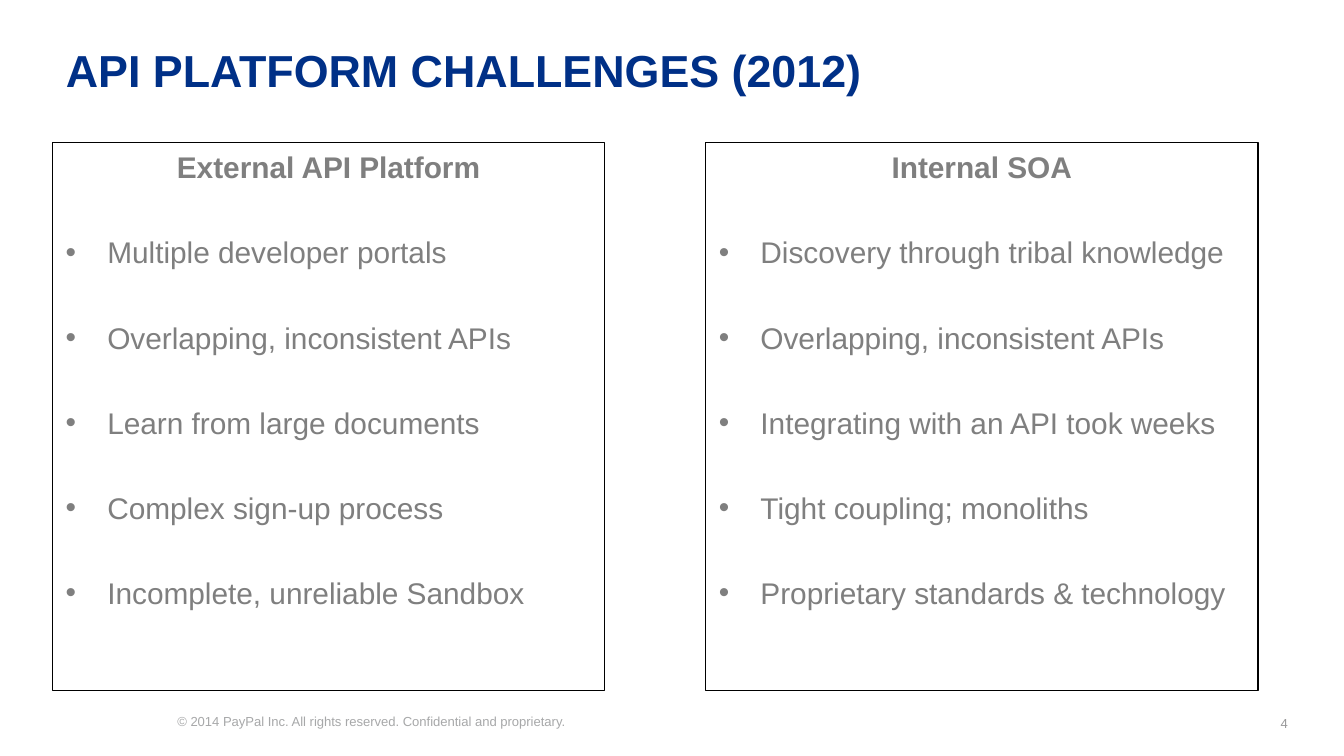
"""Build the API platform challenges slide."""
from dataclasses import dataclass

import pptx
import pptx.dml.color
import pptx.enum.shapes
import pptx.enum.text
import pptx.oxml
import pptx.oxml.ns
import pptx.util
from pptx.util import Inches

RGBColor = pptx.dml.color.RGBColor
Align = pptx.enum.text.PP_ALIGN
Anchor = pptx.enum.text.MSO_ANCHOR

NAVY = RGBColor(0x00, 0x30, 0x87)
GRAY = RGBColor(0x7F, 0x7F, 0x7F)
COPYRIGHT_GRAY = RGBColor(0xA7, 0xA8, 0xA9)
NUMBER_GRAY = RGBColor(0x99, 0x99, 0x9A)
BLACK = RGBColor(0x00, 0x00, 0x00)

FONT = "Arial"
BODY_SIZE = 16
PANEL_TOP = 1.06
PANEL_WIDTH = 4.11
PANEL_HEIGHT = 4.08
BULLET_INDENT = 0.31
NAMESPACE = pptx.oxml.ns.nsdecls("a")


@dataclass(frozen=True)
class Panel:
    left: float
    heading: str
    challenges: tuple[str, ...]


@dataclass(frozen=True)
class Note:
    text: str
    left: float
    top: float
    width: float
    height: float
    color: RGBColor
    align: Align
    anchor: Anchor
    inset: float


PANELS = (
    Panel(0.39, "External API Platform", (
        "Multiple developer portals",
        "Overlapping, inconsistent APIs",
        "Learn from large documents",
        "Complex sign-up process",
        "Incomplete, unreliable Sandbox",
    )),
    Panel(5.25, "Internal SOA", (
        "Discovery through tribal knowledge",
        "Overlapping, inconsistent APIs",
        "Integrating with an API took weeks",
        "Tight coupling; monoliths",
        "Proprietary standards & technology",
    )),
)

NOTES = (
    Note("© 2014 PayPal Inc. All rights reserved. Confidential and proprietary.",
         1.32, 5.31, 3.96, 0.18, COPYRIGHT_GRAY, Align.LEFT, Anchor.TOP, 0),
    Note("4", 9.22, 5.23, 0.46, 0.3, NUMBER_GRAY, Align.RIGHT, Anchor.MIDDLE, 0.1),
)


def format_text(paragraph, size: float, color: RGBColor, bold: bool = False) -> None:
    for run in paragraph.runs:
        run.font.name = FONT
        run.font.size = pptx.util.Pt(size)
        run.font.bold = bold
        run.font.color.rgb = color


def set_base_size(frame, size: int) -> None:
    list_style = frame._txBody.find(pptx.oxml.ns.qn("a:lstStyle"))
    list_style.append(pptx.oxml.parse_xml(
        f'<a:lvl1pPr {NAMESPACE}><a:defRPr sz="{size * 100}">'
        f'<a:latin typeface="{FONT}"/></a:defRPr></a:lvl1pPr>'))


def add_bullet(paragraph) -> None:
    properties = paragraph._p.get_or_add_pPr()
    properties.set("marL", str(Inches(BULLET_INDENT)))
    properties.set("indent", str(-Inches(BULLET_INDENT)))
    for element in (f'<a:buFont {NAMESPACE} typeface="{FONT}"/>',
                    f'<a:buChar {NAMESPACE} char="•"/>'):
        properties.append(pptx.oxml.parse_xml(element))


def add_title(slide, text: str) -> None:
    title = slide.shapes.title
    title.left, title.top = Inches(0.39), Inches(0.27)
    title.width, title.height = Inches(9), Inches(0.49)
    frame = title.text_frame
    frame.text = text
    frame.auto_size = pptx.enum.text.MSO_AUTO_SIZE.NONE
    frame.vertical_anchor = Anchor.TOP
    frame.margin_top = Inches(0.05)
    frame.margin_bottom = 0
    frame.paragraphs[0].alignment = Align.LEFT
    format_text(frame.paragraphs[0], 24, NAVY, bold=True)


def add_panel(slide, panel: Panel) -> None:
    box = slide.shapes.add_shape(
        pptx.enum.shapes.MSO_SHAPE.RECTANGLE, Inches(panel.left),
        Inches(PANEL_TOP), Inches(PANEL_WIDTH), Inches(PANEL_HEIGHT))
    box.shadow.inherit = False
    box.fill.background()
    box.line.color.rgb = BLACK
    box.line.width = pptx.util.Pt(0.75)
    frame = box.text_frame
    frame.word_wrap = True
    frame.vertical_anchor = Anchor.TOP
    frame.margin_top = Inches(0.05)
    set_base_size(frame, BODY_SIZE)
    heading = frame.paragraphs[0]
    heading.text = panel.heading
    heading.alignment = Align.CENTER
    format_text(heading, BODY_SIZE, GRAY, bold=True)
    for challenge in panel.challenges:
        paragraph = frame.add_paragraph()
        paragraph.text = challenge
        paragraph.alignment = Align.LEFT
        paragraph.space_before = pptx.util.Pt(26.4)
        add_bullet(paragraph)
        format_text(paragraph, BODY_SIZE, GRAY)


def add_note(slide, note: Note) -> None:
    box = slide.shapes.add_textbox(
        Inches(note.left), Inches(note.top), Inches(note.width), Inches(note.height))
    frame = box.text_frame
    frame.word_wrap = True
    frame.vertical_anchor = note.anchor
    frame.margin_left = frame.margin_right = Inches(note.inset)
    frame.margin_top = frame.margin_bottom = Inches(note.inset / 2)
    frame.text = note.text
    frame.paragraphs[0].alignment = note.align
    format_text(frame.paragraphs[0], 7, note.color)


def main() -> None:
    presentation = pptx.Presentation()
    presentation.slide_width = Inches(10)
    presentation.slide_height = Inches(10 * 9 / 16)
    slide = presentation.slides.add_slide(presentation.slide_layouts[5])
    add_title(slide, "API PLATFORM CHALLENGES (2012)")
    for panel in PANELS:
        add_panel(slide, panel)
    for note in NOTES:
        add_note(slide, note)
    presentation.save("out.pptx")


if __name__ == "__main__":
    main()
